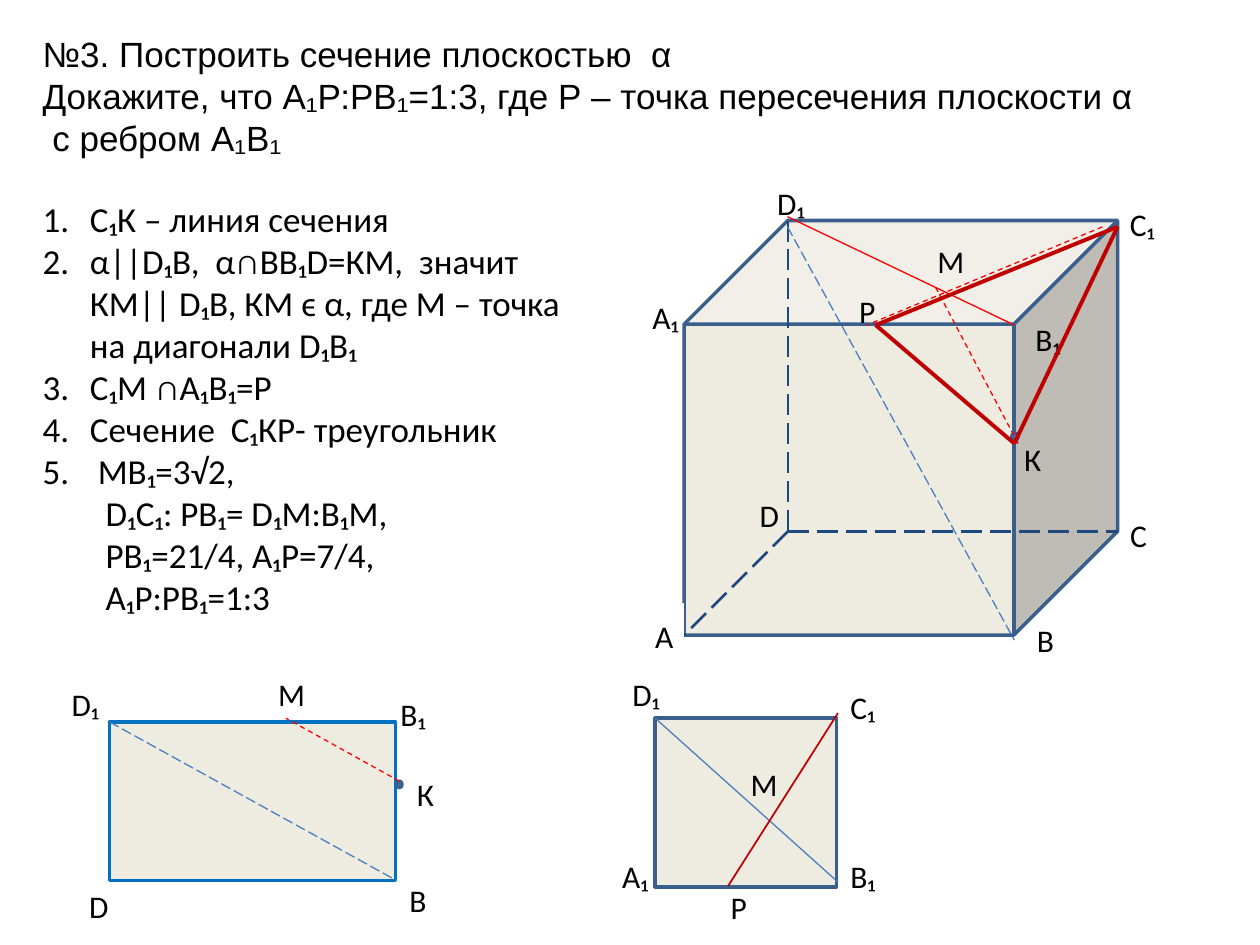
import dataclasses

import lxml.etree
import pptx
import pptx.dml.color
import pptx.enum.dml
import pptx.enum.shapes
import pptx.enum.text
import pptx.oxml.ns
import pptx.util

DASH = pptx.enum.dml.MSO_LINE.DASH
LONG_DASH = pptx.enum.dml.MSO_LINE.LONG_DASH
SHAPES = pptx.enum.shapes.MSO_SHAPE
CELL = 0.1


@dataclasses.dataclass(frozen=True)
class Theme:
    title_font: str = "Arial"
    body_font: str = "Calibri"
    body_size: int = 20
    label_size: int = 18
    ink: str = "000000"
    paper: str = "FFFFFF"
    face: str = "EEECE1"
    edge: str = "3A5F8C"
    hidden_edge: str = "1F497D"
    frame: str = "0070C0"
    point: str = "4F81BD"
    diagonal: str = "4B7EBC"
    helper: str = "FF0000"
    section: str = "C00000"


THEME = Theme()


def grid(cells):
    return pptx.util.Inches(round(cells * CELL, 3))


def rgb(value):
    return pptx.dml.color.RGBColor.from_string(value)


def style(paragraph, size, font):
    paragraph.font.size = pptx.util.Pt(size)
    paragraph.font.name = font
    paragraph.font.color.rgb = rgb(THEME.ink)


def add_text(slide, box, lines, size, font, wrap=True):
    frame = slide.shapes.add_textbox(*map(grid, box)).text_frame
    frame.word_wrap = wrap
    frame.auto_size = pptx.enum.text.MSO_AUTO_SIZE.SHAPE_TO_FIT_TEXT
    frame.text = "\n".join(lines)
    for paragraph in frame.paragraphs:
        style(paragraph, size, font)
    return frame


def add_labels(slide, labels):
    for text, *box in labels:
        add_text(slide, box, [text], THEME.label_size, THEME.body_font)


def indent(paragraph, left, hanging=0, numbered=False):
    properties = paragraph._p.get_or_add_pPr()
    properties.set("marL", str(grid(left)))
    properties.set("indent", str(-grid(hanging)))
    if numbered:
        bullet = lxml.etree.SubElement(properties, pptx.oxml.ns.qn("a:buAutoNum"))
        bullet.set("type", "arabicPeriod")


def add_figure(slide, kind, box, fill, edge, width=2):
    figure = slide.shapes.add_shape(kind, *map(grid, box))
    figure.shadow.inherit = False
    figure.fill.solid()
    figure.fill.fore_color.rgb = rgb(fill)
    figure.line.color.rgb = rgb(edge)
    figure.line.width = pptx.util.Pt(width)
    return figure


def add_segment(slide, start, end, color, width=0.75, dash=None):
    segment = slide.shapes.add_connector(
        pptx.enum.shapes.MSO_CONNECTOR.STRAIGHT, *map(grid, (*start, *end)))
    segment.line.color.rgb = rgb(color)
    segment.line.width = pptx.util.Pt(width)
    if dash:
        segment.line.dash_style = dash
    lxml.etree.SubElement(segment._element.spPr, pptx.oxml.ns.qn("a:effectLst"))


def add_solution(slide):
    steps = [
        "С₁К – линия сечения",
        "α||D₁B,  α∩ВВ₁D=КМ,  значит КМ|| D₁B, КМ ϵ α, где М – точка на диагонали D₁B₁",
        "С₁М ∩А₁В₁=Р",
        "Сечение  С₁КР- треугольник",
        " МВ₁=3√2,",
    ]
    proof = ["D₁С₁: РВ₁= D₁М:В₁М,", "РВ₁=21/4, А₁Р=7/4,", "А₁Р:РВ₁=1:3"]
    frame = add_text(slide, (2.4, 15.2, 43.7, 34.7), steps + proof,
                     THEME.body_size, THEME.body_font)
    for number, paragraph in enumerate(frame.paragraphs):
        if number < len(steps):
            indent(paragraph, 3.75, 3.75, numbered=True)
        else:
            indent(paragraph, 5)


def add_cube(slide):
    left, top, width, height = 54.3, 17.5, 34.4, 32.9
    depth = height / 4
    right, bottom = left + width, top + height
    back_d, back_c = (left + depth, bottom - depth), (right, bottom - depth)
    add_figure(slide, SHAPES.CUBE, (left, top, width, height), THEME.face, THEME.edge)
    for start, end in (((left + depth, top), back_d), (back_d, back_c),
                       (back_d, (left, bottom))):
        add_segment(slide, start, end, THEME.hidden_edge, 1.5, LONG_DASH)
    corner = add_figure(slide, SHAPES.RECTANGLE, (51, 47.9, 3.2, 5.2),
                        THEME.paper, THEME.paper, 0.75)
    corner.text_frame.text = "A"
    corner_label = corner.text_frame.paragraphs[0]
    corner_label.alignment = pptx.enum.text.PP_ALIGN.CENTER
    style(corner_label, THEME.label_size, THEME.body_font)
    add_figure(slide, SHAPES.OVAL, (80.3, 34.4, 0.5, 0.5), THEME.point, THEME.edge)
    add_labels(slide, [
        ("А₁", 50.8, 23.2, 5.4, 3.7), ("C₁", 88.7, 15.8, 5, 4.3),
        ("С", 88.7, 40.5, 2.5, 4.3), ("D₁", 60.7, 14.1, 5.9, 4.3),
        ("D", 59.3, 38.9, 3.4, 4.3), ("B", 81.3, 48.8, 3.2, 4),
        ("B₁", 81.2, 24.9, 6.7, 4.4), ("К", 80.3, 34.4, 2.5, 4.4),
        ("М", 73.4, 18.7, 4.2, 4),
    ])
    add_segment(slide, (62.5, 18), (80.5, 50.8), THEME.diagonal, dash=LONG_DASH)
    add_segment(slide, (62.5, 17.2), (80.5, 25.8), THEME.helper)
    add_segment(slide, (80.8, 35.2), (74.2, 22.7), THEME.helper, dash=DASH)
    add_segment(slide, (87.5, 18), (68.8, 25.8), THEME.helper, dash=DASH)
    point_p, point_c1, point_k = (69.5, 25.8), (88.7, 18), (80.5, 35.2)
    for start, end in ((point_p, point_c1), (point_p, point_k), (point_c1, point_k)):
        add_segment(slide, start, end, THEME.section, 2.25)
    add_labels(slide, [("Р", 67.2, 22.7, 2.3, 4)])


def add_diagonal_plane(slide):
    add_figure(slide, SHAPES.RECTANGLE, (8.7, 57.3, 22.7, 12.6), THEME.face, THEME.frame)
    add_segment(slide, (8.7, 57.3), (31.5, 69.9), THEME.diagonal, dash=LONG_DASH)
    add_figure(slide, SHAPES.OVAL, (31.5, 62, 0.4, 0.5), THEME.point, THEME.edge)
    add_segment(slide, (31.7, 62), (22.7, 57), THEME.helper, dash=DASH)
    add_labels(slide, [
        ("М", 21.1, 53.1, 3.9, 4), ("B₁", 30.8, 54.7, 4.5, 2.7),
        ("D", 6.1, 69.9, 3.2, 2.7), ("B", 31.5, 69.4, 2.8, 2.7),
        ("К", 32.1, 61, 2.8, 2.7), ("D₁", 4.7, 53.9, 4.4, 4),
    ])


def add_top_face(slide):
    add_figure(slide, SHAPES.RECTANGLE, (52, 57, 14.4, 13.4), THEME.face, THEME.edge)
    add_segment(slide, (52, 57), (66.5, 70), THEME.diagonal)
    add_segment(slide, (66.5, 56.6), (57.8, 70.3), THEME.section, 1)
    add_labels(slide, [
        ("D₁", 49.2, 53.1, 5.9, 4), ("C₁", 66.5, 54.1, 6.2, 4.9),
        ("A₁", 48.4, 67.5, 6.7, 4), ("B₁", 66.5, 67.5, 6.2, 4.9),
        ("M", 58.6, 60.2, 5.2, 4.9), ("P", 57, 70, 3.1, 4.9),
    ])


def main():
    deck = pptx.Presentation()
    deck.slide_width, deck.slide_height = grid(100), grid(75)
    slide = deck.slides.add_slide(deck.slide_layouts[6])
    add_text(slide, (2.4, 2.1, 90.3, 11.1), [
        "№3. Построить сечение плоскостью  α",
        "Докажите, что А₁Р:РВ₁=1:3, где Р – точка пересечения плоскости α",
        " с ребром А₁В₁",
    ], THEME.body_size, THEME.title_font, wrap=False)
    add_solution(slide)
    add_cube(slide)
    add_diagonal_plane(slide)
    add_top_face(slide)
    deck.save("out.pptx")


if __name__ == "__main__":
    main()
